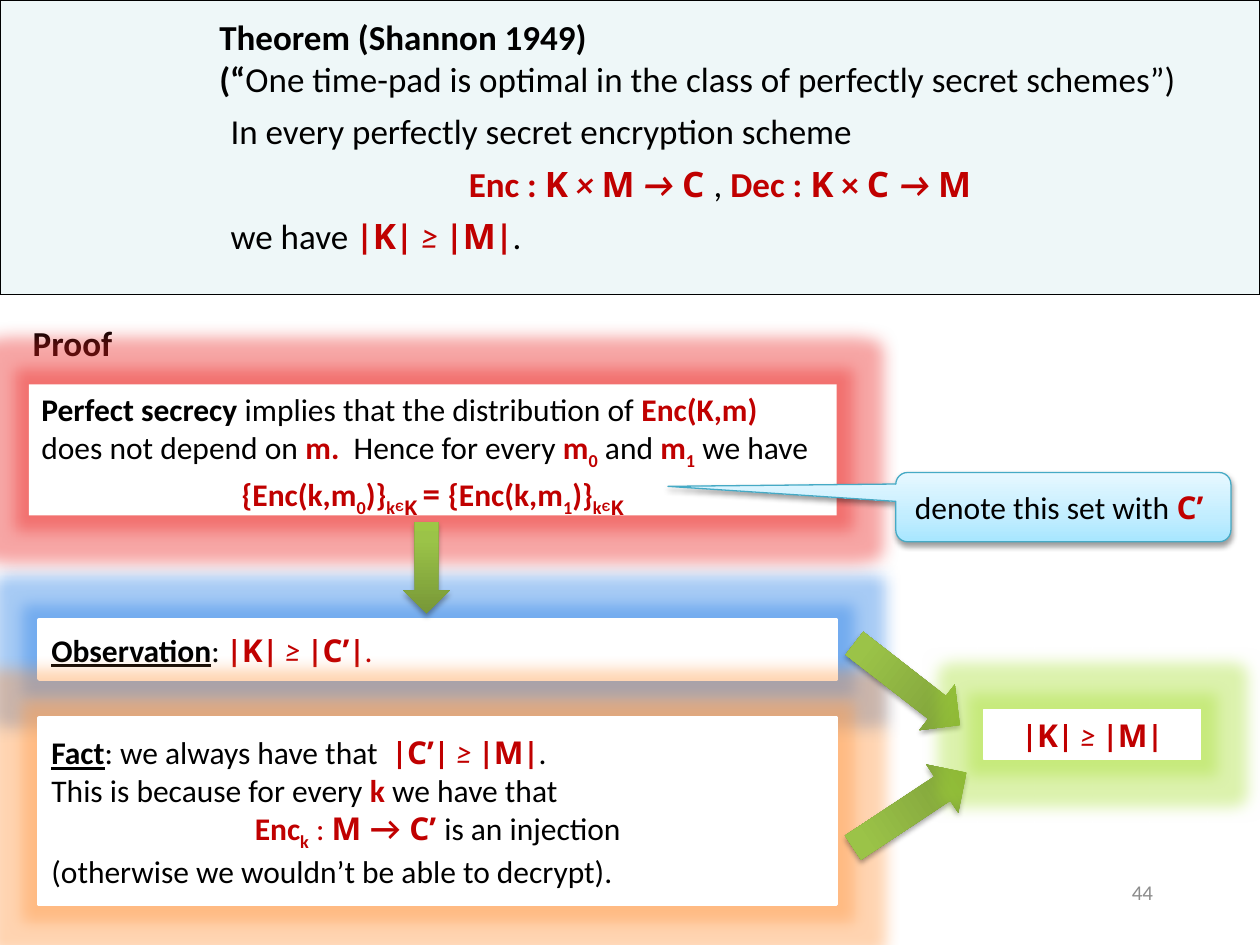
"""Build the slide on Shannon's theorem and its proof."""
from pptx import Presentation
from pptx.dml.color import RGBColor
from pptx.enum.shapes import MSO_SHAPE
from pptx.enum.text import MSO_ANCHOR, MSO_AUTO_SIZE, PP_ALIGN
from pptx.oxml import parse_xml
from pptx.oxml.ns import nsdecls
from pptx.util import Pt

PX = 9144
RECT, ARROW = MSO_SHAPE.RECTANGLE, MSO_SHAPE.DOWN_ARROW
CALLOUT = MSO_SHAPE.ROUNDED_RECTANGULAR_CALLOUT
LEFT, CENTER, RIGHT = PP_ALIGN.LEFT, PP_ALIGN.CENTER, PP_ALIGN.RIGHT
TOP, MIDDLE = MSO_ANCHOR.TOP, MSO_ANCHOR.MIDDLE
NO_FIT = MSO_AUTO_SIZE.NONE

COLORS = {
    "black": "000000", "white": "FFFFFF", "red": "C00000", "gray": "8C8C8C",
    "panel": "EEF7F8", "callout line": "46AAC5",
    "red glow": "EB2220", "blue glow": "257DE6",
    "orange glow": "FF953E", "green glow": "A8E034",
}
GREEN_FADE = [(0, "779737"), (80, "9BC348"), (100, "9DC746")]
BLUE_FADE = [(0, "A7E6FF"), (35, "C1EDFF"), (100, "E7F8FF")]

RED_BOLD = {"color": "red", "bold": True}
STYLES = {
    "plain": {},
    "bold": {"bold": True},
    "label": {"bold": True, "underline": True},
    "page": {"color": "gray"},
    "thin": {"color": "red"},
    "rel": {"color": "red", "italic": True},
    "red": RED_BOLD,
    "slant": {**RED_BOLD, "italic": True},
    "set": {**RED_BOLD, "font": "Noto Sans"},
    "arrow": {**RED_BOLD, "font": "Lato"},
    "sub": {**RED_BOLD, "sub": True},
    "in": {**RED_BOLD, "sub": True, "font": "Arial", "size": 12},
    "sub set": {**RED_BOLD, "sub": True, "font": "Noto Sans", "size": 20},
    "equals": {**RED_BOLD, "size": 20},
}


class Deck:
    """Hold the style and the current slide."""

    def __init__(self, width, height):
        self.deck = Presentation()
        self.deck.slide_width, self.deck.slide_height = width * PX, height * PX
        self.slide = self.deck.slides.add_slide(self.deck.slide_layouts[1])

    def color(self, name):
        return RGBColor.from_string(COLORS[name])

    def set_text(self, shape, paragraphs, size=18, anchor=TOP):
        frame = shape.text_frame
        frame.word_wrap, frame.auto_size = True, NO_FIT
        frame.vertical_anchor = anchor
        for index, (align, indent, before, runs) in enumerate(paragraphs):
            line = frame.add_paragraph() if index else frame.paragraphs[0]
            line.alignment, line.space_before = align, Pt(before)
            props = line._p.get_or_add_pPr()
            props.set("marL", str(indent * PX))
            props.set("indent", str(-31 * PX if indent else 0))
            props.append(parse_xml(f"<a:buNone {nsdecls('a')}/>"))
            for style, words in runs:
                self.add_run(line, words, **{"size": size, **STYLES[style]})

    def add_run(self, line, words, size, color="black", bold=False,
                italic=False, underline=False, font="Calibri", sub=False):
        run = line.add_run()
        run.text = words
        run.font.name, run.font.size = font, Pt(size)
        run.font.bold, run.font.italic = bold, italic
        run.font.underline = underline
        run.font.color.rgb = self.color(color)
        if sub:
            run._r.get_or_add_rPr().set("baseline", "-25000")

    def placeholder(self, index, box, paragraphs, size):
        holder = self.slide.placeholders[index]
        holder.left, holder.top, holder.width, holder.height = [v * PX for v in box]
        self.slide.shapes._spTree.append(holder._element)
        self.set_text(holder, paragraphs, size)

    def text(self, box, paragraphs, size, anchor):
        label = self.slide.shapes.add_textbox(*[v * PX for v in box])
        self.set_text(label, paragraphs, size, anchor)

    def shape(self, kind, box, fill=None, line=None, weight=0.75):
        item = self.slide.shapes.add_shape(kind, *[v * PX for v in box])
        item.shadow.inherit = False
        if fill:
            item.fill.solid()
            item.fill.fore_color.rgb = self.color(fill)
        if line:
            item.line.color.rgb = self.color(line)
            item.line.width = Pt(weight)
        else:
            item.line.fill.background()
        return item

    def effect(self, item, tag, attributes, color, alpha):
        item._element.spPr.find("{*}effectLst").append(parse_xml(
            f'<a:{tag} {nsdecls("a")} {attributes}><a:srgbClr val="{COLORS[color]}">'
            f'<a:alpha val="{alpha}000"/></a:srgbClr></a:{tag}>'))

    def glow_box(self, box, glow, paragraphs, line=None, weight=0.75, anchor=TOP):
        item = self.shape(RECT, box, "white", line, weight)
        self.effect(item, "glow", 'rad="228600"', glow, 40)
        self.set_text(item, paragraphs, anchor=anchor)

    def raised(self, kind, box, fade, line=None, alpha=35):
        item = self.shape(kind, box, line=line)
        stops = "".join(f'<a:gs pos="{at}000"><a:srgbClr val="{tone}"/></a:gs>'
                        for at, tone in fade)
        item._element.spPr.find("{*}prstGeom").addnext(parse_xml(
            f'<a:gradFill {nsdecls("a")} rotWithShape="1"><a:gsLst>{stops}</a:gsLst>'
            '<a:lin ang="16200000" scaled="0"/></a:gradFill>'))
        self.effect(item, "outerShdw",
                    'blurRad="40000" dist="23000" dir="5400000" rotWithShape="0"',
                    "black", alpha)
        return item

    def arrow(self, box, rotation=0):
        self.raised(ARROW, box, GREEN_FADE).rotation = rotation

    def callout(self, box, adjustments, paragraphs):
        item = self.raised(CALLOUT, box, BLUE_FADE, "callout line", 38)
        for index, value in enumerate(adjustments):
            item.adjustments[index] = value
        self.set_text(item, paragraphs, anchor=MIDDLE)


def para(*runs, align=LEFT, indent=0, before=0):
    """Return one paragraph of styled runs."""
    return align, indent, before, runs


def at_least(larger, smaller):
    """Return the runs that compare the sizes of two sets."""
    return [("red", "|"), ("set", larger), ("red", "| "), ("rel", "≥ "),
            ("red", "|"), ("set", smaller), ("red", "|")]


def ciphertexts(message):
    """Return the runs for the encryptions of one message under all keys."""
    return [("red", "{Enc(k,m"), ("sub", message), ("red", ")}"),
            ("sub", "k"), ("in", "Є")]


def main():
    """Draw the slide from back to front."""
    deck = Deck(1000, 750)
    deck.glow_box((31, 492, 633, 47), "blue glow", [
        para(("label", "Observation"), ("plain", ": "), *at_least("K", "C’"),
             ("thin", "."))], "white", 2, MIDDLE)
    deck.glow_box((31, 570, 633, 148), "orange glow", [
        para(("label", "Fact"), ("plain", ": we always have that  "),
             *at_least("C’", "M"), ("plain", ".")),
        para(("plain", "This is because for every "), ("red", "k"),
             ("plain", " we have that")),
        para(("red", "Enc"), ("sub", "k"), ("thin", " : "), ("set", "M "),
             ("arrow", "→"), ("set", " C’ "), ("plain", "is an injection"),
             align=CENTER),
        para(("plain", "(otherwise we wouldn’t be able to decrypt).")),
    ], "white", 2, MIDDLE)
    deck.text((717, 683, 208, 50), [para(("page", "44"), align=RIGHT)], 12, MIDDLE)

    deck.shape(RECT, (0, 0, 1000, 234), "panel", "black")
    statement = {"indent": 40, "before": 6}
    deck.placeholder(1, (164, 7, 813, 204), [
        para(("bold", "Theorem (Shannon 1949)")),
        para(("bold", "(“"), ("plain", "One time-pad is optimal in the class of "
                                       "perfectly secret schemes”)")),
        para(("plain", "In every perfectly secret encryption scheme"), **statement),
        para(("red", "Enc : "), ("set", "K"), ("slant", " × "), ("set", "M"),
             ("slant", " → "), ("set", "C "), ("plain", ", "), ("red", "Dec : "),
             ("set", "K"), ("red", " × "), ("set", "C "), ("slant", "→ "),
             ("set", "M "), align=CENTER, **statement),
        para(("plain", "we have "), *at_least("K", "M"), ("plain", "."), **statement),
    ], 20)
    deck.placeholder(0, (16, 250, 961, 44), [para(("bold", "Proof"))], 20)

    deck.arrow((697, 490, 46, 106), 307.8)
    deck.arrow((699, 589, 46, 108), 236.5)
    deck.glow_box((781, 563, 172, 40), "green glow",
                  [para(*at_least("K", "M"), align=CENTER)], "white")
    deck.glow_box((23, 305, 641, 104), "red glow", [
        para(("bold", "Perfect secrecy "),
             ("plain", "implies that the distribution of "), ("red", "Enc(K,m)"),
             ("plain", " does not depend on "), ("red", "m.  "),
             ("plain", "Hence for every "), ("red", "m"), ("sub", "0"),
             ("plain", " and "), ("red", "m"), ("sub", "1"), ("plain", " we have")),
        para(*ciphertexts("0"), ("sub set", "K "), ("equals", "= "),
             *ciphertexts("1"), ("sub set", "K"), align=CENTER)])
    deck.callout((711, 375, 266, 55), (-1.18, -0.3, 0.17), [
        para(("plain", "denote this set with "), ("set", "C’ "), align=CENTER)])
    deck.arrow((320, 414, 37, 73))
    deck.deck.save("out.pptx")


if __name__ == "__main__":
    main()
